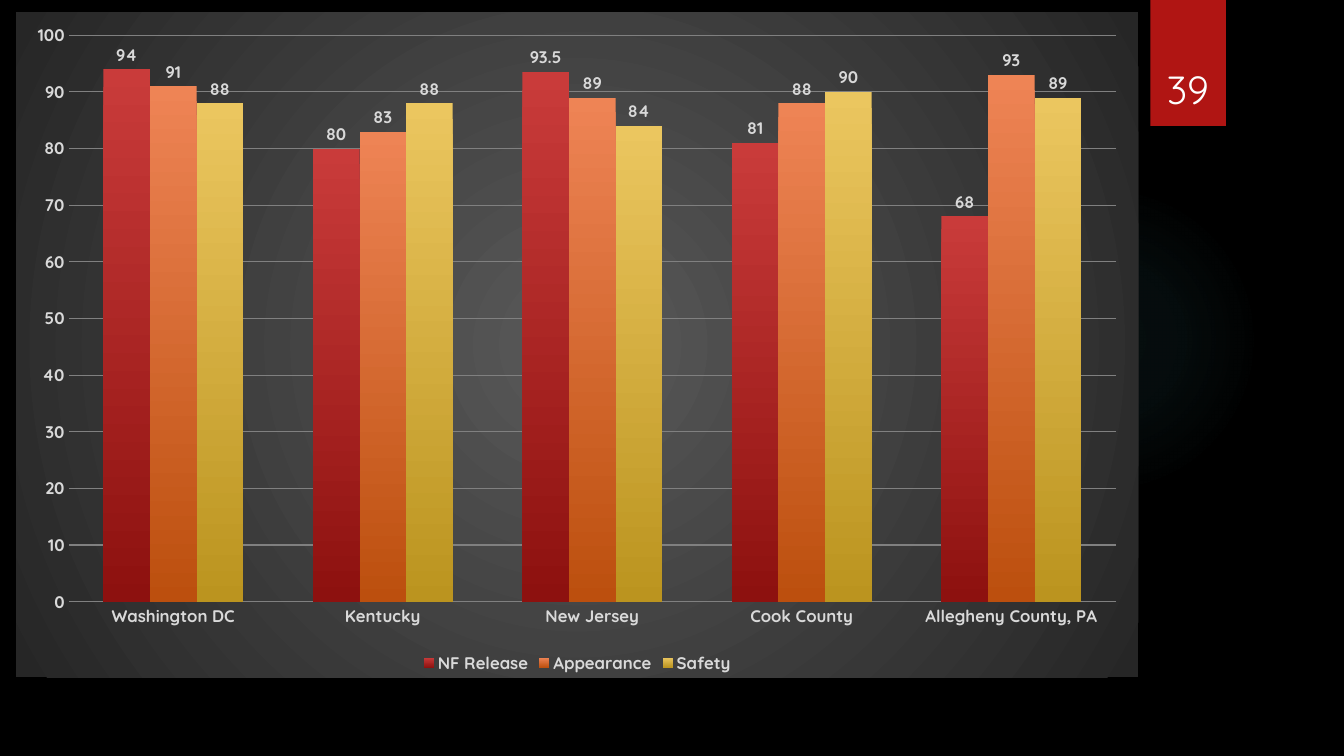
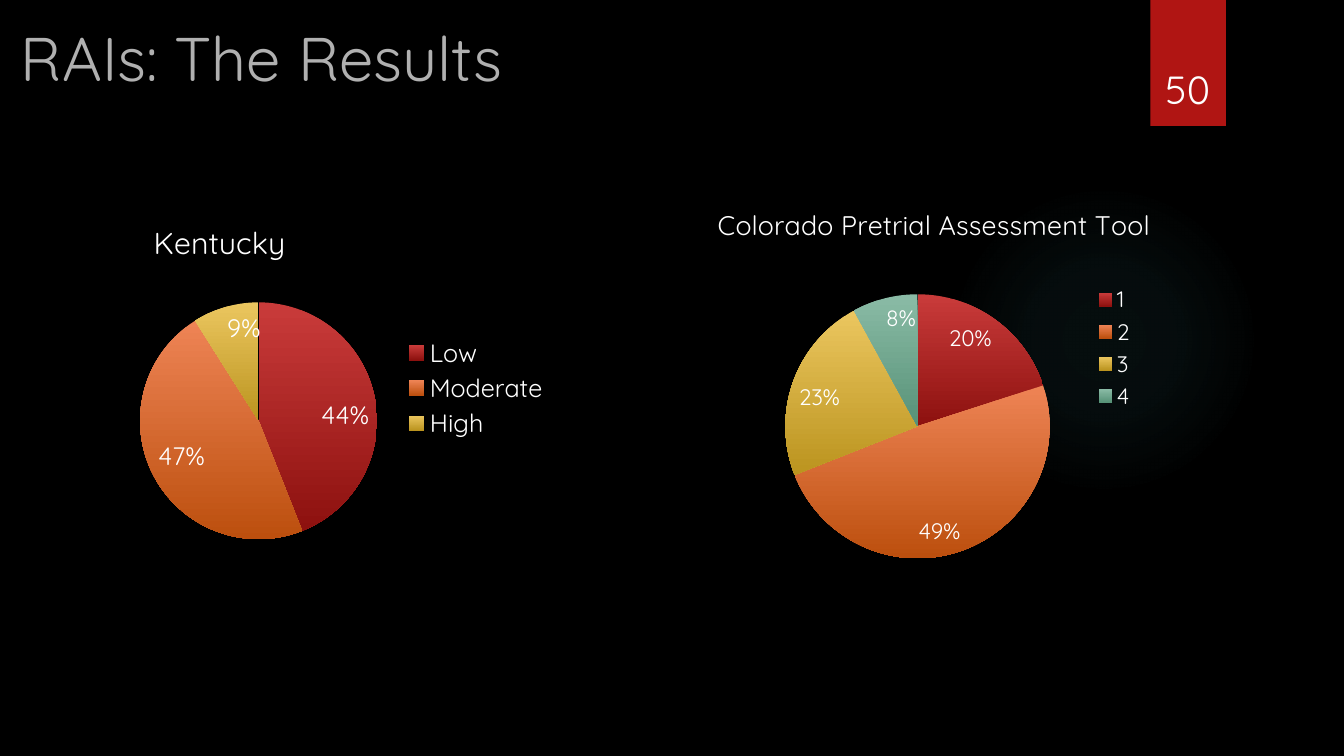
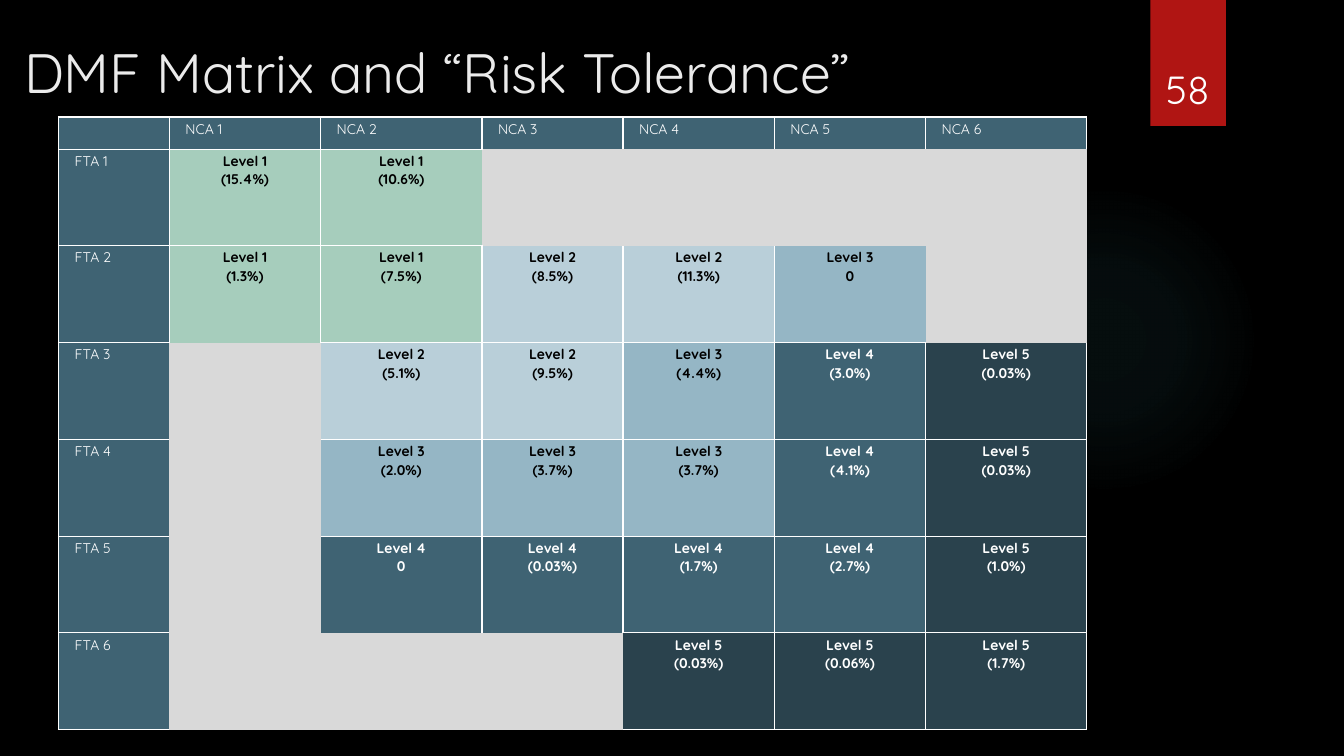
import pptx
import pptx.chart.data
import pptx.dml.color
import pptx.enum.chart
import pptx.enum.shapes
import pptx.enum.text
import pptx.oxml
import pptx.oxml.ns
import pptx.util
from lxml import etree

Inches, Pt = pptx.util.Inches, pptx.util.Pt
qn = pptx.oxml.ns.qn
Chart = pptx.enum.chart.XL_CHART_TYPE
Label = pptx.enum.chart.XL_LABEL_POSITION
Legend = pptx.enum.chart.XL_LEGEND_POSITION
Tick = pptx.enum.chart.XL_TICK_MARK
Align = pptx.enum.text.PP_ALIGN
Anchor = pptx.enum.text.MSO_ANCHOR
Shape = pptx.enum.shapes.MSO_SHAPE

# Shared look
FONT = "Quicksand"
HUES = {
    "black": "000000", "white": "FFFFFF", "red": "B01513", "glow": "50B9C1",
    "title": "B0B0B0", "bright": "EBEBEB", "pale": "D9D9D9", "grid": "808080",
    "mid": "595959", "dark": "262626", "head": "3F6373",
}
RAMPS = [("C93B3A", "8D110F"), ("EE8455", "BC4F0E"),
         ("EBC65F", "BB941F"), ("8ABBA6", "579277")]
LEVELS = {1: ("A6CDBC", "black"), 2: ("B9CFD9", "black"),
          3: ("95B6C5", "black"), 4: ("3F6373", "white"),
          5: ("2A424D", "white")}

# Slide content; boxes are left, top, width, height in inches
PLACES = ["Washington DC", "Kentucky", "New Jersey", "Cook County",
          "Allegheny County, PA"]
RATES = {
    "NF Release": (94, 80, 93.5, 81, 68),
    "Appearance": (91, 83, 89, 88, 93),
    "Safety": (88, 88, 84, 90, 89),
}
PIES = [
    {"name": "Kentucky", "size": 18, "box": (0.58, 1.83, 5.55, 3.65),
     "parts": {"Low": 0.44, "Moderate": 0.47, "High": 0.09},
     "title": (1.47, 2.13, 1.3, 0.4), "plot": (1.39, 3, 2.35, 2.35),
     "legend": (4.02, 3.31, 1.4, 1.08)},
    {"name": "Colorado Pretrial Assessment Tool", "size": 16,
     "box": (6.52, 1.83, 5.88, 3.83),
     "parts": {"1": 0.2, "2": 0.49, "3": 0.23, "4": 0.08},
     "title": (7.07, 1.99, 4.3, 0.36), "plot": (7.79, 2.92, 2.62, 2.62),
     "legend": (10.85, 2.79, 0.4, 1.32)},
]
MATRIX = [
    [(1, "(15.4%)"), (1, "(10.6%)"), None, None, None, None],
    [(1, "(1.3%)"), (1, "(7.5%)"), (2, "(8.5%)"), (2, "(11.3%)"), (3, "0"), None],
    [None, (2, "(5.1%)"), (2, "(9.5%)"), (3, "(4.4%)"), (4, "(3.0%)"), (5, "(0.03%)")],
    [None, (3, "(2.0%)"), (3, "(3.7%)"), (3, "(3.7%)"), (4, "(4.1%)"), (5, "(0.03%)")],
    [None, (4, "0"), (4, "(0.03%)"), (4, "(1.7%)"), (4, "(2.7%)"), (5, "(1.0%)")],
    [None, None, None, (5, "(0.03%)"), (5, "(0.06%)"), (5, "(1.7%)")],
]
WIDTHS = [1.1, 1.5, 1.6, 1.4, 1.5, 1.5, 1.6]
HEIGHTS = [0.32] + [0.96] * 6


def rgb(hue):
    return pptx.dml.color.RGBColor.from_string(HUES.get(hue, hue))


def inch(box):
    return [Inches(part) for part in box]


def style(font, size, hue, bold=False):
    font.name, font.size, font.bold = FONT, Pt(size), bold
    font.color.rgb = rgb(hue)


def ramp(fill, pair):
    fill.gradient()
    fill.gradient_angle = 270
    for stop, hue in zip(fill.gradient_stops, pair):
        stop.color.rgb = rgb(hue)


def radial(stops):
    """Circular gradient from (position, hue, opacity) in percent."""
    marks = "".join(
        f'<a:gs pos="{at * 1000}"><a:srgbClr val="{HUES[hue]}">'
        f'<a:alpha val="{alpha * 1000}"/></a:srgbClr></a:gs>'
        for at, hue, alpha in stops)
    return pptx.oxml.parse_xml(
        f'<a:gradFill {pptx.oxml.ns.nsdecls("a")} rotWithShape="1">'
        f'<a:gsLst>{marks}</a:gsLst><a:path path="circle">'
        '<a:fillToRect l="50000" t="50000" r="50000" b="50000"/>'
        '</a:path></a:gradFill>')


def write(slide, text, box, size, hue, anchor, align=Align.LEFT):
    frame = slide.shapes.add_textbox(*inch(box)).text_frame
    frame.word_wrap, frame.vertical_anchor = True, anchor
    frame.text = text
    para = frame.paragraphs[0]
    para.alignment = align
    style(para.runs[0].font, size, hue)


def start(deck, number):
    """New slide with the shared background, glow and number tab."""
    slide = deck.slides.add_slide(deck.slide_layouts[6])
    slide.background.fill.solid()
    slide.background.fill.fore_color.rgb = rgb("black")
    glow = slide.shapes.add_shape(Shape.OVAL, *inch((9.41, 1.83, 3.08, 3.08)))
    tab = slide.shapes.add_shape(Shape.RECTANGLE, *inch((11.41, 0, 0.75, 1.25)))
    for shape in (glow, tab):
        shape.shadow.inherit = False
        shape.line.fill.background()
        shape.fill.solid()
        shape.fill.fore_color.rgb = rgb("red")
    props = glow.element.spPr
    props.replace(props.find(qn("a:solidFill")), radial(
        [(0, "glow", 7), (36, "glow", 6), (69, "glow", 0)]))
    write(slide, str(number), (11.32, 0.32, 0.92, 0.84), 28, "white",
          Anchor.BOTTOM, Align.CENTER)
    return slide


# Charts
def place(node, index, box, frame, inner=False):
    """Fix a chart part at a slide position."""
    for old in node.findall(qn("c:layout")):
        node.remove(old)
    layout = etree.Element(qn("c:layout"))
    manual = etree.SubElement(layout, qn("c:manualLayout"))
    left, top, wide, high = frame
    tags = [("xMode", "edge"), ("yMode", "edge"),
            ("x", (box[0] - left) / wide), ("y", (box[1] - top) / high),
            ("w", box[2] / wide), ("h", box[3] / high)]
    if inner:
        tags.insert(0, ("layoutTarget", "inner"))
    for tag, value in tags:
        etree.SubElement(manual, qn("c:" + tag)).set("val", str(value))
    node.insert(index, layout)


def draw(slide, kind, cats, series, box, plot, spot, size, hue, bold):
    """Chart with its legend, labels and plot position."""
    data = pptx.chart.data.CategoryChartData()
    data.categories = cats
    for name, values in series.items():
        data.add_series(name, values)
    chart = slide.shapes.add_chart(kind, *inch(box), data).chart
    style(chart.font, size, hue, bold)
    chart.has_title = False
    chart.has_legend = True
    chart.legend.position = spot
    chart.legend.include_in_layout = False
    style(chart.legend.font, size, hue, bold)
    place(chart.element.find(".//" + qn("c:plotArea")), 0, plot, box, True)
    group = chart.plots[0]
    group.has_data_labels = True
    labels = group.data_labels
    labels.show_value = True
    style(labels.font, size, hue, bold)
    return chart


def columns(slide):
    chart = draw(slide, Chart.COLUMN_CLUSTERED, PLACES, RATES,
                 (0.16, 0.12, 11.13, 6.6), (0.68, 0.35, 10.39, 5.62),
                 Legend.BOTTOM, 12, "pale", True)
    group = chart.plots[0]
    group.gap_width, group.overlap = 150, 0
    group.vary_by_categories = False
    group.data_labels.position = Label.OUTSIDE_END
    for bars, pair in zip(group.series, RAMPS):
        ramp(bars.format.fill, pair)
    for axis in (chart.category_axis, chart.value_axis):
        axis.major_tick_mark = axis.minor_tick_mark = Tick.NONE
        axis.format.line.fill.background()
        style(axis.tick_labels.font, 12, "pale", True)
    axis = chart.value_axis
    axis.minimum_scale, axis.maximum_scale, axis.major_unit = 0, 100, 10
    line = axis.major_gridlines.format.line
    line.color.rgb, line.width = rgb("grid"), Pt(0.75)
    # Chart area fill
    area = etree.Element(qn("c:spPr"))
    area.append(radial([(0, "mid", 100), (100, "dark", 100)]))
    edge = etree.SubElement(area, qn("a:ln"))
    etree.SubElement(edge, qn("a:noFill"))
    chart.element.find(qn("c:txPr")).addprevious(area)


def pie(slide, item):
    box, size, parts = item["box"], item["size"], item["parts"]
    chart = draw(slide, Chart.PIE, list(parts), {"Series 1": parts.values()},
                 box, item["plot"], Legend.RIGHT, size, "white", False)
    chart.has_title = True
    frame = chart.chart_title.text_frame
    frame.text = item["name"]
    style(frame.paragraphs[0].runs[0].font, size * 1.2, "white")
    place(chart.element.find(".//" + qn("c:title")), 1, item["title"], box)
    place(chart.element.find(".//" + qn("c:legend")), 1, item["legend"], box)
    group = chart.plots[0]
    group.vary_by_categories = True
    labels = group.data_labels
    labels.number_format, labels.number_format_is_linked = "0%", False
    labels.position = Label.INSIDE_END
    for index, pair in zip(range(len(parts)), RAMPS):
        look = group.series[0].points[index].format
        ramp(look.fill, pair)
        look.line.fill.background()


# Table
def border(cell, sides):
    """White lines on the named sides, none on the others."""
    props = cell._tc.get_or_add_tcPr()
    for index, side in enumerate("LRTB"):
        line = etree.Element(qn("a:ln" + side), w=str(Pt(1)))
        if side in sides:
            fill = etree.SubElement(line, qn("a:solidFill"))
            etree.SubElement(fill, qn("a:srgbClr"), val=HUES["white"])
        else:
            etree.SubElement(line, qn("a:noFill"))
        props.insert(index, line)


def fill_cell(cell, lines, back, hue, bold):
    cell.fill.solid()
    cell.fill.fore_color.rgb = rgb(back)
    cell.margin_left = cell.margin_right = Inches(0.16)
    cell.margin_top, cell.margin_bottom = Inches(0.02), 0
    cell.text_frame.text = "\n".join(lines)
    for para in cell.text_frame.paragraphs:
        para.line_spacing = 1.07
        para.alignment = Align.CENTER if bold else Align.LEFT
        for run in para.runs:
            style(run.font, 10, hue, bold)
        if not para.runs:
            etree.SubElement(para._p, qn("a:endParaRPr"), sz="1000")


def matrix(slide):
    count = len(WIDTHS)
    box = (0.58, 1.16, sum(WIDTHS), sum(HEIGHTS))
    table = slide.shapes.add_table(count, count, *inch(box)).table
    table.first_row = table.horz_banding = False
    for column, width in zip(table.columns, WIDTHS):
        column.width = Inches(width)
    for row, height in zip(table.rows, HEIGHTS):
        row.height = Inches(height)

    def blank(row, col):
        inside = 0 < row < count and 0 < col < count
        return inside and MATRIX[row - 1][col - 1] is None

    near = {"L": (0, -1), "R": (0, 1), "T": (-1, 0), "B": (1, 0)}
    for row in range(count):
        for col in range(count):
            cell = table.cell(row, col)
            if blank(row, col):
                fill_cell(cell, [], "pale", "black", False)
                border(cell, "")
                continue
            if row and col:
                level, share = MATRIX[row - 1][col - 1]
                fill_cell(cell, [f"Level {level}", share], *LEVELS[level], True)
            else:
                name = f"NCA {col}" if col else f"FTA {row}" if row else ""
                fill_cell(cell, [name], "head", "white", False)
            border(cell, [side for side, (down, over) in near.items()
                          if not blank(row + down, col + over)])


def main():
    deck = pptx.Presentation()
    deck.slide_width, deck.slide_height = Inches(13.33), Inches(7.5)

    columns(start(deck, 39))

    results = start(deck, 50)
    write(results, "RAIs: The Results", (0.11, 0.15, 10.29, 1.14), 44,
          "title", Anchor.TOP)
    for item in PIES:
        pie(results, item)

    risk = start(deck, 58)
    write(risk, "DMF Matrix and “Risk Tolerance”", (0.14, 0.16, 9.72, 0.93),
          39.6, "bright", Anchor.BOTTOM)
    matrix(risk)

    deck.save("out.pptx")


if __name__ == "__main__":
    main()
